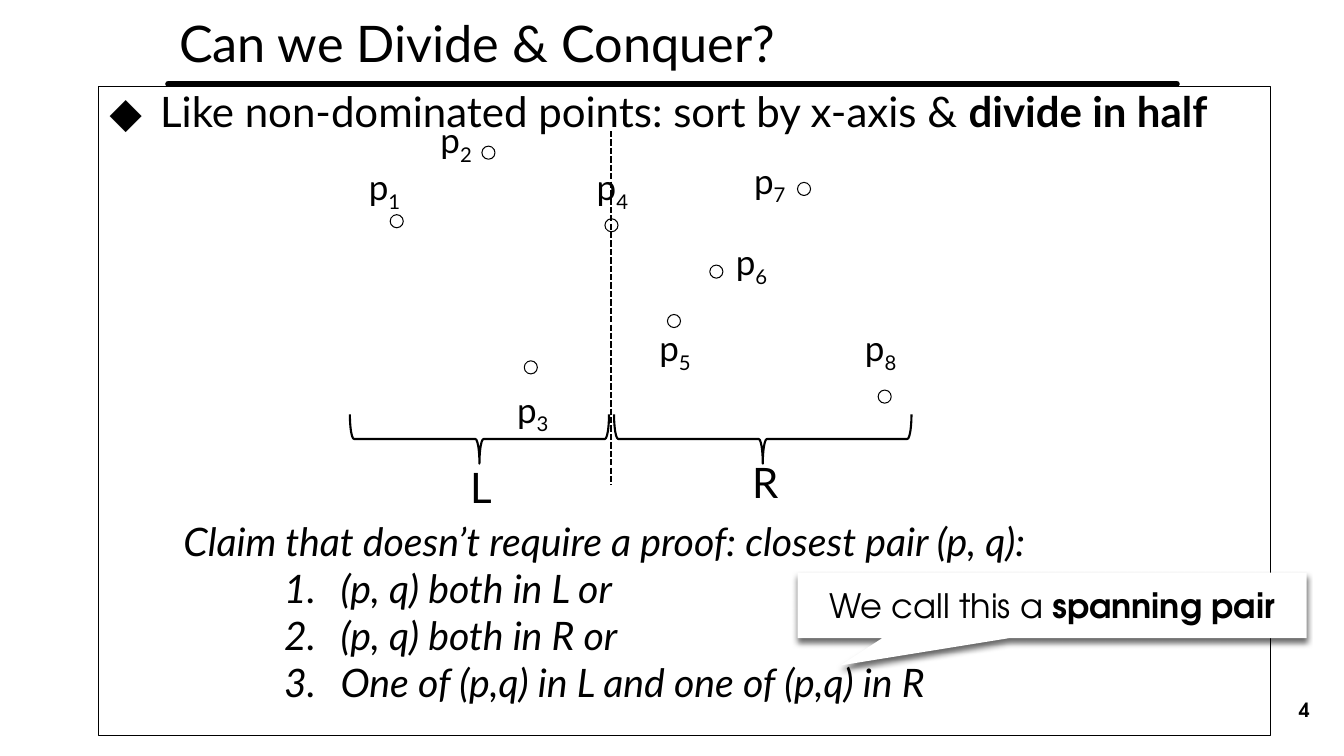
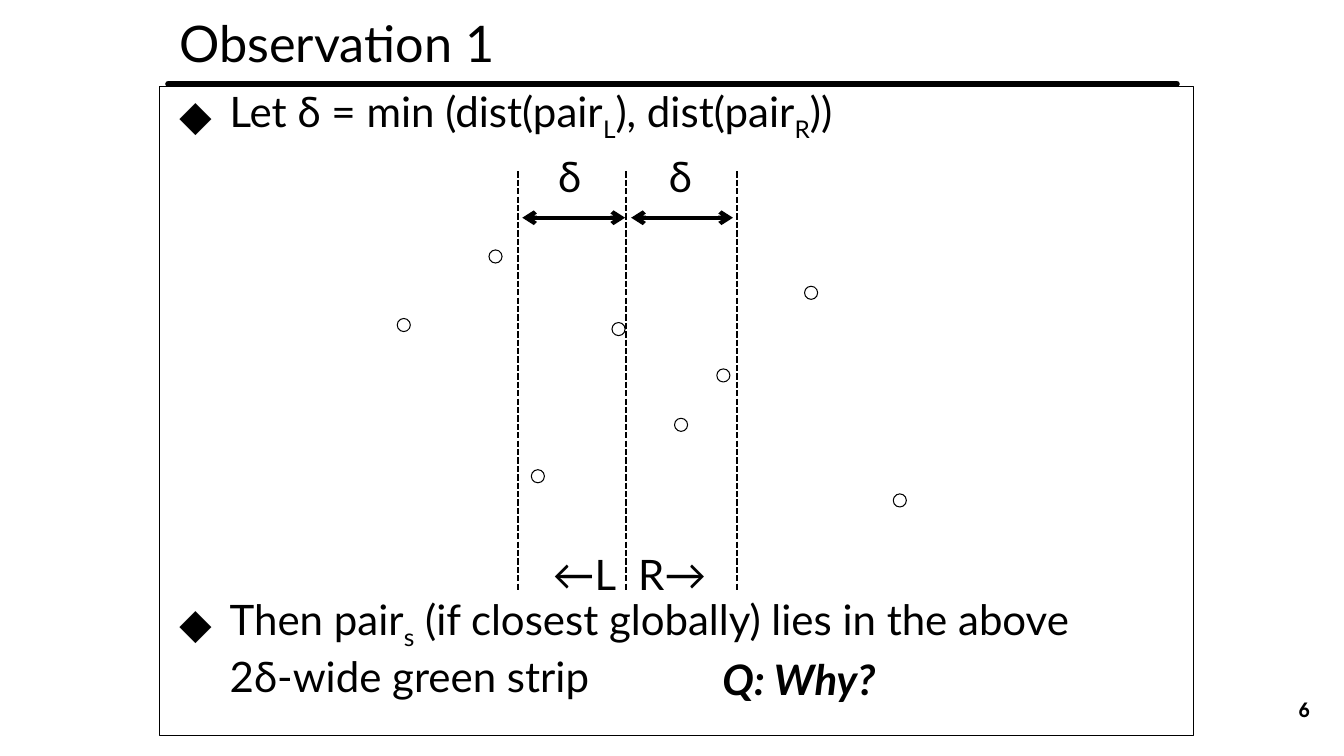
from dataclasses import dataclass

from lxml import etree
from pptx import Presentation
from pptx.dml.color import RGBColor
from pptx.enum.dml import MSO_LINE
from pptx.enum.shapes import MSO_CONNECTOR, MSO_SHAPE
from pptx.enum.text import MSO_ANCHOR, MSO_AUTO_SIZE, PP_ALIGN
from pptx.oxml.ns import qn
from pptx.util import Emu, Pt

BOX, DOT = MSO_SHAPE.FLOWCHART_PROCESS, MSO_SHAPE.OVAL
BRACE, CALL = MSO_SHAPE.RIGHT_BRACE, MSO_SHAPE.RECTANGULAR_CALLOUT
LEFT, MID, RIGHT = PP_ALIGN.LEFT, PP_ALIGN.CENTER, PP_ALIGN.RIGHT
DASH = MSO_LINE.SQUARE_DOT
SCALE = 9144  # EMU in one px, 100 px to the inch


@dataclass(frozen=True)
class Theme:
    ink: RGBColor = RGBColor(0, 0, 0)
    paper: RGBColor = RGBColor(255, 255, 255)
    font: str = "Lato"
    alt: str = "TeX Gyre Adventor"
    title: int = 36
    body: int = 30
    claim: int = 28
    label: int = 25
    note: int = 24
    page: int = 14
    thin: float = 0.75
    line: float = 1.5
    arrow: float = 3
    rule: float = 4.5


@dataclass(frozen=True)
class Run:
    text: str
    bold: bool = False
    slant: bool = False
    sub: bool = False


@dataclass(frozen=True)
class Para:
    runs: tuple[Run, ...]
    mark: str = ""  # a bullet sign, or "1." for numbers
    left: int = 0
    hang: int = 0


@dataclass(frozen=True)
class Spot:
    x: int
    y: int
    tag_x: int
    tag_y: int
    dx: int = 0  # extra move on the second slide
    dy: int = 0


T = Theme()
SIZE, DOT_W = (1333, 750), 13
MOVE = (7, 103)  # move of the point set on the second slide
SPOTS = (
    Spot(387, 213, 356, 159),
    Spot(478, 145, 427, 113),
    Spot(520, 358, 503, 380, dy=5),
    Spot(600, 217, 582, 159),
    Spot(662, 312, 644, 319),
    Spot(704, 263, 720, 234),
    Spot(791, 181, 738, 153),
    Spot(871, 387, 848, 319, dx=8),
)


def px(num: float) -> Emu:
    return Emu(round(num * SCALE))


def one(text: str, bold: bool = False, slant: bool = False) -> list[Para]:
    return [Para((Run(text, bold, slant),))]


def point(*runs: Run) -> list[Para]:
    return [Para(runs, "◆", 50, -50)]


def add_mark(para, item: Para) -> None:
    props = para._p.get_or_add_pPr()
    props.set("marL", str(px(item.left)))
    props.set("indent", str(px(item.hang)))
    if item.mark == "1.":
        etree.SubElement(props, qn("a:buAutoNum"), type="arabicPeriod")
    else:
        etree.SubElement(props, qn("a:buFont"), typeface=T.font)
        etree.SubElement(props, qn("a:buChar"), char=item.mark)


def fill_text(frame, paras: list[Para], size: int, align, font: str) -> None:
    frame.word_wrap = True
    for num, item in enumerate(paras):
        para = frame.add_paragraph() if num else frame.paragraphs[0]
        para.alignment = align
        if item.mark:
            add_mark(para, item)
        for part in item.runs:
            run = para.add_run()
            run.text = part.text
            face = run.font
            face.name, face.size = font, Pt(size)
            face.bold, face.italic = part.bold, part.slant
            face.color.rgb = T.ink
            if part.sub:
                run._r.get_or_add_rPr().set("baseline", "-25000")


def add_text(slide, x: int, y: int, w: int, h: int, paras: list[Para],
             size: int = T.body, align=LEFT, font: str = T.font):
    frame = slide.shapes.add_textbox(px(x), px(y), px(w), px(h)).text_frame
    fill_text(frame, paras, size, align, font)
    frame.auto_size = MSO_AUTO_SIZE.SHAPE_TO_FIT_TEXT
    return frame


def add_form(slide, kind, x: float, y: float, w: int, h: int,
             width: float = T.thin, solid: bool = True):
    form = slide.shapes.add_shape(kind, px(x), px(y), px(w), px(h))
    form.shadow.inherit = False
    if solid:
        form.fill.solid()
        form.fill.fore_color.rgb = T.paper
    else:
        form.fill.background()
    if width:
        form.line.color.rgb = T.ink
        form.line.width = Pt(width)
    else:
        form.line.fill.background()
    return form


def add_line(slide, x1: int, y1: int, x2: int, y2: int, width: float,
             dash=None, heads: bool = False, cap: str = "flat") -> None:
    line = slide.shapes.add_connector(
        MSO_CONNECTOR.STRAIGHT, px(x1), px(y1), px(x2), px(y2))
    line.line.color.rgb = T.ink
    line.line.width = Pt(width)
    if dash is not None:
        line.line.dash_style = dash
    stroke = line.line._get_or_add_ln()
    stroke.set("cap", cap)
    if heads:
        for end in ("a:headEnd", "a:tailEnd"):
            etree.SubElement(stroke, qn(end), type="arrow")
    etree.SubElement(line._element.spPr, qn("a:effectLst"))


def add_brace(slide, x: int, y: int, w: int, h: int) -> None:
    """Brace pointing down, spanning the given area."""
    mid_x, mid_y = x + w / 2, y + h / 2
    form = add_form(slide, BRACE, mid_x - h / 2, mid_y - w / 2, h, w,
                    T.line, solid=False)
    form.rotation = 90


def add_note(slide, runs: tuple[Run, ...]) -> None:
    form = add_form(slide, CALL, 791, 568, 505, 65, width=0)
    form.adjustments[0], form.adjustments[1] = -0.416, 0.918
    effect = form._element.spPr.find(qn("a:effectLst"))
    shade = etree.SubElement(
        effect, qn("a:outerShdw"), blurRad=str(Pt(4)), dist=str(Pt(3)),
        dir="5400000", algn="t", rotWithShape="0")
    tint = etree.SubElement(shade, qn("a:srgbClr"), val=str(T.ink))
    etree.SubElement(tint, qn("a:alpha"), val="60000")
    form.text_frame.vertical_anchor = MSO_ANCHOR.MIDDLE
    fill_text(form.text_frame, [Para(runs)], T.note, MID, T.alt)


def add_dot(slide, x: int, y: int) -> None:
    add_form(slide, DOT, x, y, DOT_W, DOT_W)


def add_base(deck, title: str, page: str, x: int, w: int):
    """Slide with frame, title, rule and page number."""
    slide = deck.slides.add_slide(deck.slide_layouts[6])
    add_form(slide, BOX, x, 86, w, 644)
    add_text(slide, 168, 7, 944, 71, one(title), T.title)
    add_line(slide, 167, 83, 1167, 83, T.rule, cap="rnd")
    frame = add_text(slide, 1249, 684, 60, 40, one(page, bold=True),
                     T.page, RIGHT, T.alt)
    frame.auto_size = MSO_AUTO_SIZE.NONE
    frame.vertical_anchor = MSO_ANCHOR.MIDDLE
    return slide


def add_split(deck) -> None:
    slide = add_base(deck, "Can we Divide & Conquer?", "4", 98, 1162)
    add_text(slide, 99, 80, 1190, 61, point(
        Run("Like non-dominated points: sort by x-axis & "),
        Run("divide in half", bold=True)))

    # Named points
    for num, spot in enumerate(SPOTS, 1):
        add_dot(slide, spot.x, spot.y)
        name = Para((Run("p"), Run(str(num), sub=True)))
        add_text(slide, spot.tag_x, spot.tag_y, 62, 52, [name], T.label)

    # Halves and the line between them
    add_brace(slide, 347, 411, 257, 49)
    add_brace(slide, 609, 411, 295, 49)
    add_text(slide, 386, 453, 182, 61, one("L"), align=MID)
    add_text(slide, 688, 448, 142, 61, one("R"), align=MID)
    add_line(slide, 606, 130, 606, 481, T.line, DASH)

    # Claim and its cases
    cases = ("(p, q) both in L or", "(p, q) both in R or",
             "One of (p,q) in L and one of (p,q) in R")
    claim = one("Claim that doesn’t require a proof: closest pair (p, q):",
                slant=True)
    claim += [Para((Run(case, slant=True),), "1.", 156, -56)
              for case in cases]
    add_text(slide, 172, 508, 995, 199, claim, T.claim)
    add_note(slide, (Run("We call this a "), Run("spanning pair", bold=True)))


def add_strip(deck) -> None:
    slide = add_base(deck, "Observation 1", "6", 158, 1026)
    add_text(slide, 168, 80, 975, 61, point(
        Run("Let δ = min (dist(pair"), Run("L", sub=True),
        Run("), dist(pair"), Run("R", sub=True), Run("))")))

    # Points
    for spot in SPOTS:
        add_dot(slide, spot.x + MOVE[0] + spot.dx,
                spot.y + MOVE[1] + spot.dy)

    # Strip edges, widths and sides
    for x in (514, 621, 731):
        add_line(slide, x, 170, x, 586, T.line, DASH)
    for x, start, end in ((525, 518, 620), (635, 626, 727)):
        add_text(slide, x, 144, 80, 61, one("δ"), align=MID)
        add_line(slide, start, 216, end, 216, T.arrow, heads=True)
    add_text(slide, 439, 539, 182, 61, one("←L"), align=RIGHT)
    add_text(slide, 623, 539, 182, 61, one("R→"))

    # Result and question
    add_text(slide, 168, 584, 975, 111, point(
        Run("Then pair"), Run("s", sub=True),
        Run(" (if closest globally) lies in the above "
            "2δ-wide green strip")))
    add_text(slide, 436, 643, 713, 61, one("Q: Why?", True, True), align=MID)


def main() -> None:
    deck = Presentation()
    deck.slide_width, deck.slide_height = map(px, SIZE)
    add_split(deck)
    add_strip(deck)
    deck.save("out.pptx")


if __name__ == "__main__":
    main()
